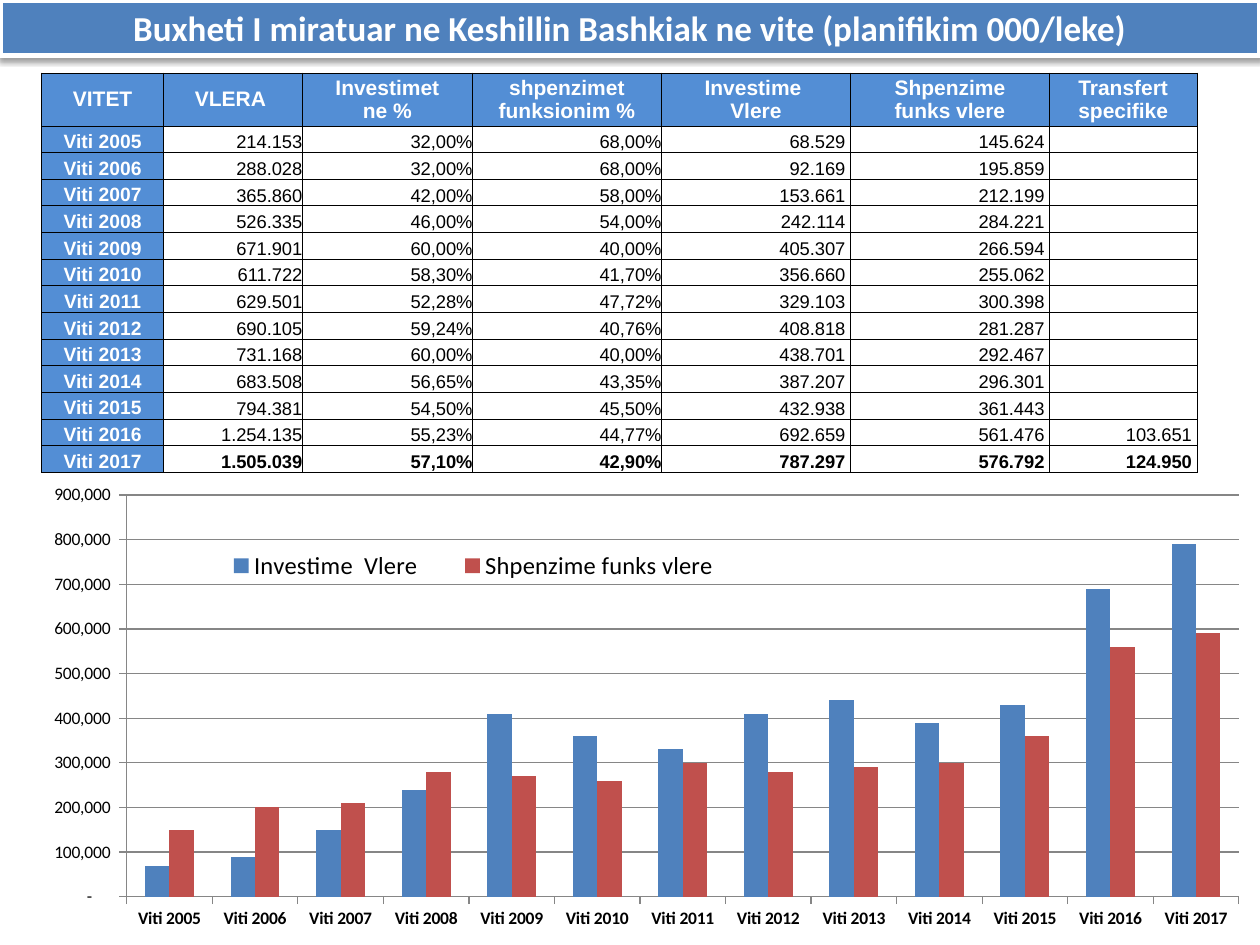
from dataclasses import dataclass

from lxml import etree
from pptx import Presentation
from pptx import util as u
from pptx.chart import data as chart_data
from pptx.dml.color import RGBColor
from pptx.enum import chart as charts, shapes, text
from pptx.oxml import parse_xml
from pptx.oxml.ns import nsdecls, qn


@dataclass(frozen=True)
class Theme:
    blue: RGBColor = RGBColor(0x4F, 0x81, 0xBD)
    red: RGBColor = RGBColor(0xC0, 0x50, 0x4D)
    header: RGBColor = RGBColor(0x53, 0x8E, 0xD5)
    white: RGBColor = RGBColor(0xFF, 0xFF, 0xFF)
    black: RGBColor = RGBColor(0, 0, 0)
    grid: RGBColor = RGBColor(0x86, 0x86, 0x86)
    heading_font: str = "Calibri"
    table_font: str = "Arial"
    title_size: float = 20
    legend_size: float = 14
    header_size: float = 12
    year_size: float = 11
    value_size: float = 10.5
    axis_size: float = 10


THEME = Theme()
TITLE = "Buxheti I miratuar ne Keshillin Bashkiak ne vite (planifikim 000/leke)"
HEADERS = ["VITET", "VLERA ", "Investimet\nne %", "shpenzimet\nfunksionim %",
           "Investime \nVlere", "Shpenzime\nfunks vlere", "Transfert\nspecifike"]
COLUMN_WIDTHS = [0.97, 1.1, 1.35, 1.5, 1.5, 1.58, 1.17]
HEADER_HEIGHT = 0.42
BUDGET = [
    ["Viti 2005", "214.153", "32,00%", "68,00%", "68.529", "145.624", ""],
    ["Viti 2006", "288.028", "32,00%", "68,00%", "92.169", "195.859", ""],
    ["Viti 2007", "365.860", "42,00%", "58,00%", "153.661", "212.199", ""],
    ["Viti 2008", "526.335", "46,00%", "54,00%", "242.114", "284.221", ""],
    ["Viti 2009", "671.901", "60,00%", "40,00%", "405.307", "266.594", ""],
    ["Viti 2010", "611.722", "58,30%", "41,70%", "356.660", "255.062", ""],
    ["Viti 2011", "629.501", "52,28%", "47,72%", "329.103", "300.398", ""],
    ["Viti 2012", "690.105", "59,24%", "40,76%", "408.818", "281.287", ""],
    ["Viti 2013", "731.168", "60,00%", "40,00%", "438.701", "292.467", ""],
    ["Viti 2014", "683.508", "56,65%", "43,35%", "387.207", "296.301", ""],
    ["Viti 2015", "794.381", "54,50%", "45,50%", "432.938", "361.443", ""],
    ["Viti 2016", "1.254.135", "55,23%", "44,77%", "692.659", "561.476", "103.651"],
    ["Viti 2017", "1.505.039", "57,10%", "42,90%", "787.297", "576.792", "124.950"],
]
INVESTMENTS = [70000, 90000, 150000, 240000, 410000, 360000, 330000,
               410000, 440000, 390000, 430000, 690000, 790000]
SPENDING = [150000, 200000, 210000, 280000, 270000, 260000, 300000,
            280000, 290000, 300000, 360000, 560000, 590000]


def style_font(font, name, size, color, bold=False):
    font.name = name
    font.size = u.Pt(size)
    font.bold = bold
    font.color.rgb = color


def add_title(page, left, top, width, height):
    banner = page.shapes.add_shape(shapes.MSO_SHAPE.RECTANGLE, *map(u.Inches, (left, top, width, height)))
    banner.fill.solid()
    banner.fill.fore_color.rgb = THEME.blue
    banner.line.color.rgb = THEME.white
    banner.line.width = u.Pt(3)
    banner.shadow.inherit = False
    effects = banner._element.spPr.find(qn("a:effectLst"))
    effects.append(parse_xml(
        f'<a:outerShdw {nsdecls("a")} blurRad="40000" dist="20000" dir="5400000" rotWithShape="0">'
        '<a:srgbClr val="000000"><a:alpha val="38000"/></a:srgbClr></a:outerShdw>'))
    frame = banner.text_frame
    frame.word_wrap = True
    frame.vertical_anchor = text.MSO_ANCHOR.MIDDLE
    para = frame.paragraphs[0]
    para.text = TITLE
    para.alignment = text.PP_ALIGN.CENTER
    style_font(para.font, THEME.heading_font, THEME.title_size, THEME.white, True)


def add_borders(cell):
    properties = cell._tc.get_or_add_tcPr()
    for index, side in enumerate(("lnL", "lnR", "lnT", "lnB")):
        properties.insert(index, parse_xml(
            f'<a:{side} {nsdecls("a")} w="{u.Pt(0.5)}"><a:solidFill>'
            f'<a:srgbClr val="{THEME.black}"/></a:solidFill></a:{side}>'))


def fill_cell(cell, words, size, color, bold, fill, alignment, anchor, right_margin=0):
    cell.margin_left = cell.margin_top = cell.margin_bottom = 0
    cell.margin_right = u.Inches(right_margin)
    cell.vertical_anchor = anchor
    cell.text = words
    for para in cell.text_frame.paragraphs:
        para.alignment = alignment
        style_font(para.font, THEME.table_font, size, color, bold)
        if not words:
            etree.SubElement(para._p, qn("a:endParaRPr"), sz=str(int(size * 100)))
    if words:
        cell.fill.solid()
        cell.fill.fore_color.rgb = fill
    else:
        cell.fill.background()
    add_borders(cell)


def add_budget_table(page, left, top, width, height):
    table = page.shapes.add_table(len(BUDGET) + 1, len(HEADERS),
                                  *map(u.Inches, (left, top, width, height))).table
    table.first_row = table.horz_banding = False
    for column, column_width in zip(table.columns, COLUMN_WIDTHS):
        column.width = u.Inches(column_width)
    for row in table.rows:
        row.height = u.Inches((height - HEADER_HEIGHT) / len(BUDGET))
    table.rows[0].height = u.Inches(HEADER_HEIGHT)

    center, right = text.PP_ALIGN.CENTER, text.PP_ALIGN.RIGHT
    middle, bottom = text.MSO_ANCHOR.MIDDLE, text.MSO_ANCHOR.BOTTOM
    for column, words in enumerate(HEADERS):
        fill_cell(table.cell(0, column), words, THEME.header_size, THEME.white, True,
                  THEME.header, center, middle)
    for row, (year, *values) in enumerate(BUDGET, 1):
        fill_cell(table.cell(row, 0), year, THEME.year_size, THEME.white, True,
                  THEME.header, center, bottom)
        for column, value in enumerate(values, 1):
            fill_cell(table.cell(row, column), value, THEME.value_size, THEME.black,
                      row == len(BUDGET), THEME.white, right, bottom,
                      0.04 if column > 3 else 0)


def set_layout(parent, before, x, y, width, height, inner=False):
    for previous in parent.findall(qn("c:layout")):
        parent.remove(previous)
    target = '<c:layoutTarget val="inner"/>' if inner else ""
    sizes = "".join(f'<c:{key} val="{value}"/>'
                    for key, value in zip("xywh", (x, y, width, height)))
    layout = parse_xml(
        f'<c:layout {nsdecls("c")}><c:manualLayout>{target}<c:xMode val="edge"/>'
        f'<c:yMode val="edge"/>{sizes}</c:manualLayout></c:layout>')
    parent.find(qn(before)).addprevious(layout)


def add_budget_chart(page, left, top, width, height):
    source = chart_data.CategoryChartData()
    source.categories = [row[0] for row in BUDGET]
    source.add_series("Investime  Vlere", INVESTMENTS)
    source.add_series("Shpenzime funks vlere", SPENDING)
    chart = page.shapes.add_chart(charts.XL_CHART_TYPE.COLUMN_CLUSTERED,
                                  *map(u.Inches, (left, top, width, height)), source).chart
    chart.has_title = False
    style_font(chart.font, THEME.heading_font, THEME.axis_size, THEME.black)

    plot = chart.plots[0]
    plot.vary_by_categories = False
    plot.gap_width = 150
    plot.overlap = 0
    for series, color in zip(plot.series, (THEME.blue, THEME.red)):
        series.format.fill.solid()
        series.format.fill.fore_color.rgb = color

    for axis, bold in ((chart.category_axis, True), (chart.value_axis, False)):
        axis.format.line.color.rgb = THEME.grid
        axis.major_tick_mark = charts.XL_TICK_MARK.OUTSIDE
        style_font(axis.tick_labels.font, THEME.heading_font, THEME.axis_size, THEME.black, bold)
    values = chart.value_axis
    values.minimum_scale, values.maximum_scale, values.major_unit = 0, 900000, 100000
    values.major_gridlines.format.line.color.rgb = THEME.grid
    values.tick_labels.number_format = '_(* #,##0_);_(* \\(#,##0\\);_(* "-"??_);_(@_)'
    values.tick_labels.number_format_is_linked = False

    chart.has_legend = True
    legend = chart.legend
    legend.position = charts.XL_LEGEND_POSITION.RIGHT
    legend.include_in_layout = False
    style_font(legend.font, THEME.heading_font, THEME.legend_size, THEME.black)
    set_layout(legend._element, "c:overlay", 0.14, 0.14, 0.45, 0.08)
    set_layout(chart._chartSpace.chart.plotArea, "c:barChart", 0.085, 0.027, 0.898, 0.869, True)


def main():
    deck = Presentation()
    deck.slide_width, deck.slide_height = u.Inches(10), u.Inches(7.5)
    page = deck.slides.add_slide(deck.slide_layouts[6])
    add_title(page, 0, 0, 10, 0.44)
    add_budget_table(page, 0.33, 0.58, 9.17, 3.17)
    add_budget_chart(page, 0.17, 3.83, 9.83, 3.67)
    deck.save("out.pptx")


if __name__ == "__main__":
    main()
